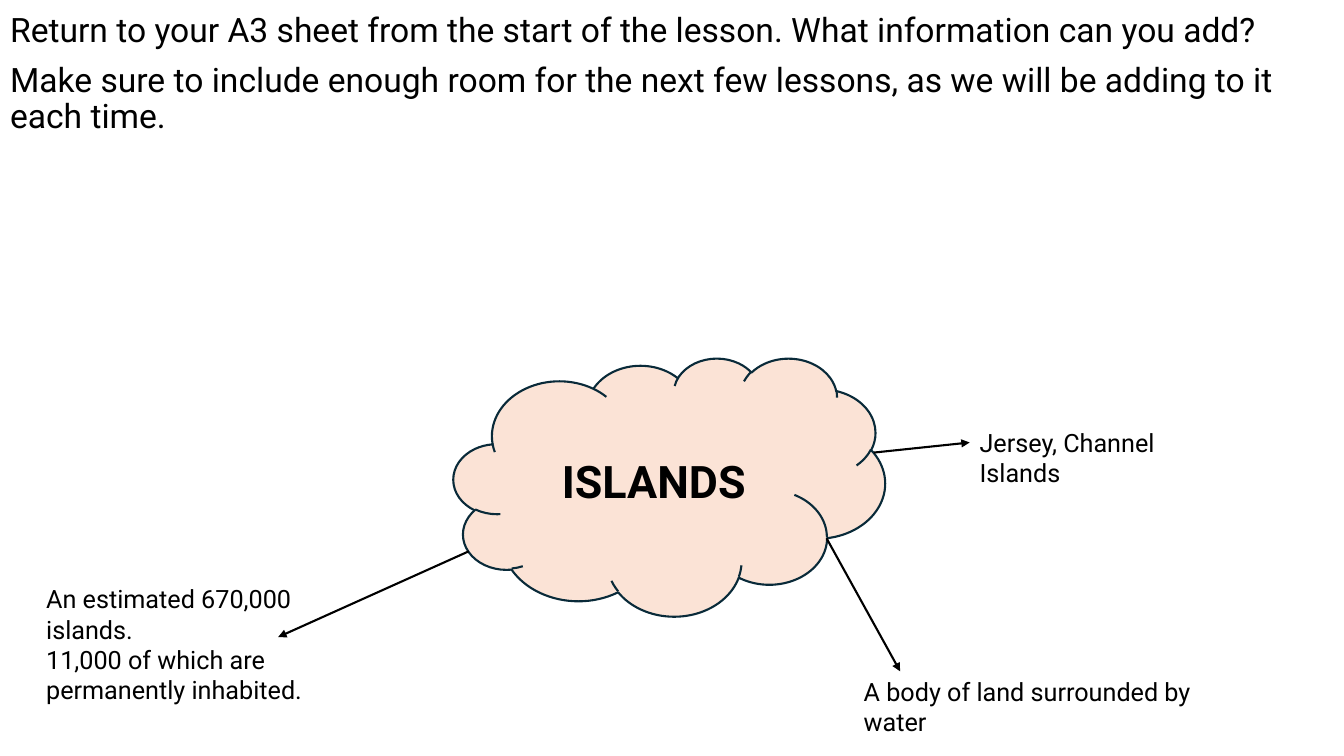
from dataclasses import dataclass

from lxml import etree
from pptx import Presentation
from pptx.dml.color import RGBColor
from pptx.enum import shapes, text
from pptx.oxml import ns
from pptx.util import Pt


@dataclass(frozen=True)
class Theme:
    font: str = "Roboto"
    ink: RGBColor = RGBColor(0, 0, 0)
    cloud_fill: RGBColor = RGBColor(0xFB, 0xE3, 0xD6)
    cloud_line: RGBColor = RGBColor(0x09, 0x2A, 0x39)
    task_size: int = 24
    topic_size: int = 32
    fact_size: int = 18
    line_width: float = 1.5


THEME = Theme()

# Boxes are left, top, width, height in points; arrows are start and end points.
TASK = [
    "Return to your A3 sheet from the start of the lesson. What information can you add?",
    "Make sure to include enough room for the next few lessons, "
    "as we will be adding to it each time.",
]
TASK_BOX = (0, 5.76, 939.6, 462.24)
TOPIC = "ISLANDS"
TOPIC_BOX = (324, 255.6, 308.16, 184.32)
FACTS = [
    {"lines": ["Jersey, Channel Islands"],
     "box": (692.64, 301.68, 197.28, 29),
     "arrow": (624.24, 323.28, 692.64, 316.08)},
    {"lines": ["A body of land surrounded by water"],
     "box": (609.84, 479.52, 289.44, 29),
     "arrow": (590.4, 384.48, 642.96, 479.52)},
    {"lines": ["An estimated 670,000 islands.",
               "11,000 of which are permanently inhabited."],
     "box": (25.92, 413.28, 218.16, 94.32),
     "arrow": (334.8, 393.84, 198.72, 455.04)},
]


def points(values):
    return [Pt(value) for value in values]


def write(frame, lines, size, bold=False):
    frame.word_wrap = True
    frame.text = "\n".join(lines)
    for paragraph in frame.paragraphs:
        font = paragraph.font
        font.name, font.size, font.bold = THEME.font, Pt(size), bold
        font.color.rgb = THEME.ink


def add_task(slide):
    task = slide.placeholders[1]
    task.left, task.top, task.width, task.height = points(TASK_BOX)
    write(task.text_frame, TASK, THEME.task_size)
    for paragraph in task.text_frame.paragraphs:
        paragraph.line_spacing = 0.9
        paragraph.space_before = Pt(10)
        properties = paragraph._p.get_or_add_pPr()
        properties.set("marL", "0")
        properties.set("indent", "0")
        bullet = etree.Element(ns.qn("a:buNone"))
        properties.find(ns.qn("a:defRPr")).addprevious(bullet)


def add_topic(slide):
    cloud = slide.shapes.add_shape(shapes.MSO_SHAPE.CLOUD, *points(TOPIC_BOX))
    cloud.shadow.inherit = False
    cloud.fill.solid()
    cloud.fill.fore_color.rgb = THEME.cloud_fill
    cloud.line.color.rgb = THEME.cloud_line
    cloud.line.width = Pt(THEME.line_width)
    write(cloud.text_frame, [TOPIC], THEME.topic_size, bold=True)
    cloud.text_frame.vertical_anchor = text.MSO_ANCHOR.MIDDLE
    cloud.text_frame.paragraphs[0].alignment = text.PP_ALIGN.CENTER


def add_arrow(slide, ends):
    arrow = slide.shapes.add_connector(
        shapes.MSO_CONNECTOR.STRAIGHT, *points(ends))
    arrow.line.color.rgb = THEME.ink
    arrow.line.width = Pt(THEME.line_width)
    etree.SubElement(arrow.line._get_or_add_ln(), ns.qn("a:tailEnd"), type="triangle")
    etree.SubElement(arrow._element.spPr, ns.qn("a:effectLst"))


def main():
    deck = Presentation()
    deck.slide_width, deck.slide_height = Pt(960), Pt(540)
    slide = deck.slides.add_slide(deck.slide_layouts[1])
    empty_title = slide.shapes.title.element
    empty_title.getparent().remove(empty_title)

    add_task(slide)
    add_topic(slide)
    for fact in FACTS:
        fact_box = slide.shapes.add_textbox(*points(fact["box"]))
        write(fact_box.text_frame, fact["lines"], THEME.fact_size)
        add_arrow(slide, fact["arrow"])

    deck.save("out.pptx")


if __name__ == "__main__":
    main()
